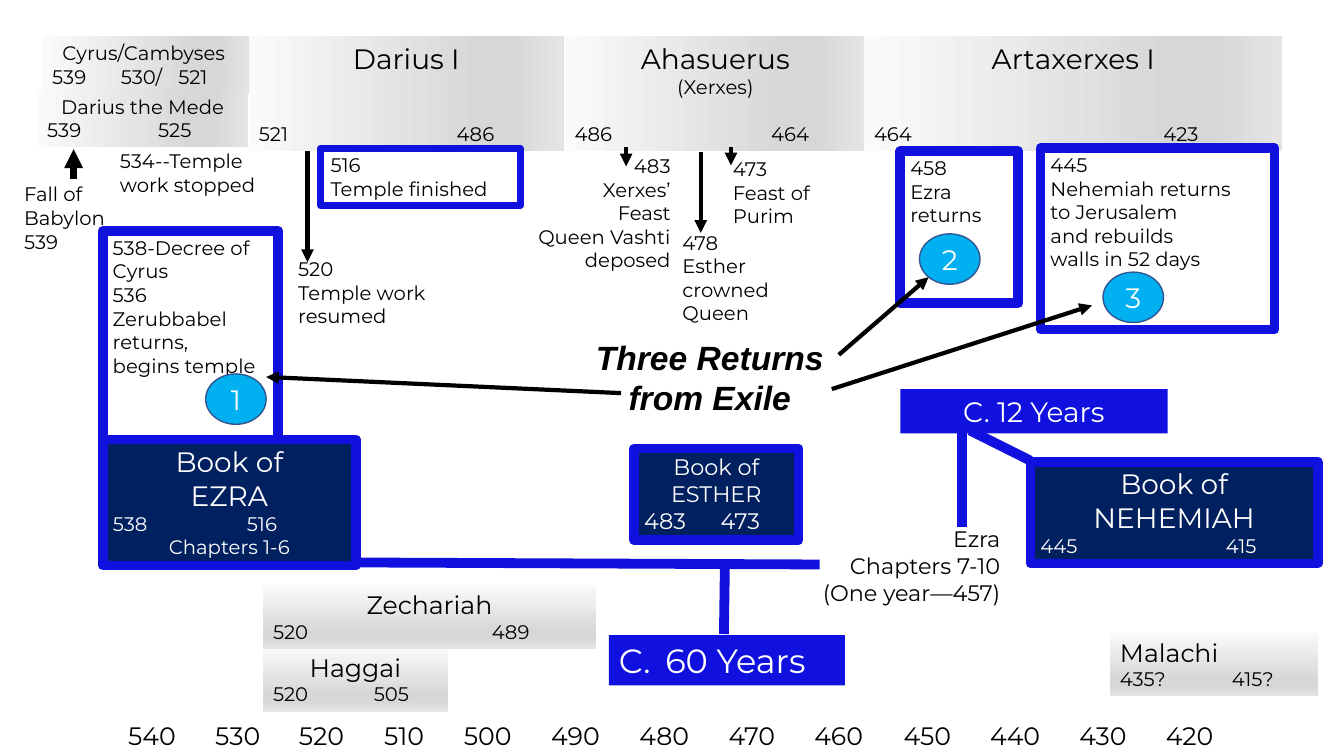
from copy import deepcopy
from dataclasses import dataclass

from lxml import etree
from pptx import Presentation
from pptx import util as u
from pptx.dml.color import RGBColor
from pptx.enum import shapes, text
from pptx.oxml import ns

CELL = u.Inches(0.1)
FONT = "Montserrat"
BLACK = RGBColor(0x00, 0x00, 0x00)
WHITE = RGBColor(0xFF, 0xFF, 0xFF)
BLUE = RGBColor(0x11, 0x11, 0xDF)
NAVY = RGBColor(0x00, 0x20, 0x60)
SKY = RGBColor(0x00, 0xB0, 0xF0)
SKY_EDGE = RGBColor(0x32, 0x54, 0x91)
SILVER = [(0, RGBColor(0xFA, 0xFA, 0xFA)), (0.74, RGBColor(0xD7, 0xD7, 0xD7)),
          (0.83, RGBColor(0xD7, 0xD7, 0xD7)), (1, RGBColor(0xE4, 0xE4, 0xE4))]
LEFT, CENTER, RIGHT = (text.PP_ALIGN.LEFT, text.PP_ALIGN.CENTER,
                       text.PP_ALIGN.RIGHT)
ACROSS, DOWN = 0, 270
YEAR_STOPS = [14.1, 22.6, 30.9, 39.1, 47.4, 56.1, 64.9,
              73.6, 82.2, 91, 99.7, 108.4, 117]


@dataclass
class Line:
    """One paragraph; tabs and indent are in grid cells, gap in points."""
    words: str
    size: int = 14
    align: int = LEFT
    tabs: tuple = ()
    gap: float = 0
    indent: float = 0
    tab_kind: str = "l"


def cells(*values):
    """Turn grid cells into lengths."""
    return [round(v * CELL) for v in values]


def lines(words, size=14, align=LEFT):
    """Make a like-styled Line from each row of words."""
    return [Line(row, size, align) for row in words.split("\n")]


def write(s, content, color=BLACK, font=FONT, strong=False):
    """Fill a shape with paragraphs from the top down."""
    tf = s.text_frame
    tf.word_wrap = True
    tf.vertical_anchor = text.MSO_ANCHOR.TOP
    for i, line in enumerate(content):
        p = tf.paragraphs[0] if i == 0 else tf.add_paragraph()
        p.text = line.words
        p.alignment = line.align
        pr = p._p.get_or_add_pPr()
        if line.indent:
            pr.set("marL", str(round(line.indent * CELL)))
        if line.tabs:
            stops = etree.SubElement(pr, ns.qn("a:tabLst"))
            for stop in line.tabs:
                etree.SubElement(stops, ns.qn("a:tab"), algn=line.tab_kind,
                                 pos=str(round(stop * CELL)))
        if line.gap:
            p.space_before = u.Pt(line.gap)
        for r in p.runs:
            r.font.name, r.font.size = font, u.Pt(line.size)
            r.font.color.rgb = color
            r.font.bold = r.font.italic = strong


def label(slide, area, content, **style):
    """Add plain text."""
    write(slide.shapes.add_textbox(*cells(*area)), content, **style)


def box(slide, area, content, fill=None, edge=None, width=7, color=BLACK,
        kind=shapes.MSO_SHAPE.RECTANGLE):
    """Add a shape with text, optional fill and optional edge."""
    s = slide.shapes.add_shape(kind, *cells(*area))
    s.shadow.inherit = False
    if fill is None:
        s.fill.background()
    else:
        s.fill.solid()
        s.fill.fore_color.rgb = fill
    if edge is None:
        s.line.fill.background()
    else:
        s.line.color.rgb = edge
        s.line.width = u.Pt(width)
    write(s, content, color)
    return s


def silver(slide, area, content, angle=ACROSS):
    """Add a borderless box with a silver gradient."""
    s = box(slide, area, content)
    s.fill.gradient()
    s.fill.gradient_angle = angle
    stops = next(s._element.iter(ns.qn("a:gsLst")))
    for stop in list(stops):
        stops.append(deepcopy(stop))
    for stop, (place, shade) in zip(s.fill.gradient_stops, SILVER):
        stop.position = place
        stop.color.rgb = shade


def badge(slide, col, row, number):
    """Add a numbered disc."""
    s = box(slide, (col, row, 6, 5), [Line(number, 20, CENTER)], SKY, SKY_EDGE,
            1, WHITE, shapes.MSO_SHAPE.OVAL)
    s.text_frame.vertical_anchor = text.MSO_ANCHOR.MIDDLE


def link(slide, ends, color=BLUE, width=7, arrow=False):
    """Add a straight line, with an arrowhead if asked."""
    c = slide.shapes.add_connector(shapes.MSO_CONNECTOR.STRAIGHT, *cells(*ends))
    c.line.color.rgb = color
    c.line.width = u.Pt(width)
    pr = c._element.spPr
    if arrow:
        etree.SubElement(pr.find(ns.qn("a:ln")), ns.qn("a:tailEnd"),
                         type="triangle")
    etree.SubElement(pr, ns.qn("a:effectLst"))


def kings(slide):
    """Add the row of reigns."""
    silver(slide, (4.2, 3.6, 21, 5.7),
           [Line("Cyrus/Cambyses", indent=1),
            Line("539\t530/\t521", tabs=(6.8, 12.5))])
    silver(slide, (3.7, 8.9, 20.9, 5.7),
           [Line("Darius the Mede", align=CENTER),
            Line("539\t525", tabs=(11,))])
    for col, width, name, note, years, stop, gap in [
            (24.7, 31.2, "Darius I", "", "521\t486", 19.6, 34),
            (56, 29.9, "Ahasuerus", "(Xerxes)", "486\t464", 19.5, 17),
            (85.7, 41.5, "Artaxerxes I", "", "464\t423", 28.7, 34)]:
        notes = [Line(note, align=CENTER)] if note else []
        silver(slide, (col, 3.6, width, 11.4),
               [Line(name, 20, CENTER), *notes,
                Line(years, tabs=(stop,), gap=gap)])


def events(slide):
    """Add the dated events under the reigns."""
    for area, words, align in [
            ((1.4, 17.6, 11.2, 8.1), "Fall of\nBabylon\n539", LEFT),
            ((10.9, 14.3, 20.8, 5.7), "534--Temple\nwork stopped", LEFT),
            ((28.6, 25, 16, 8.1), "520\nTemple work\nresumed", LEFT),
            ((48.2, 14.8, 19.3, 12.8),
             "483\nXerxes’\nFeast\nQueen Vashti\ndeposed", RIGHT),
            ((66.7, 22.4, 11.7, 10.4), "478\nEsther\ncrowned\nQueen", LEFT),
            ((71.7, 15.1, 10.8, 8.1), "473\nFeast of\nPurim", LEFT)]:
        label(slide, area, lines(words, align=align))
    for area, width, words in [
            ((31.8, 14.7, 19.8, 5.7), 5, "516\nTemple finished"),
            ((89.3, 15, 11.7, 15.1), 7, "458\nEzra\nreturns"),
            ((103.2, 14.7, 23.2, 18), 7, "445\nNehemiah returns\n"
             "to Jerusalem\nand rebuilds\nwalls in 52 days"),
            ((10.2, 22.9, 17.4, 22.2), 7, "538-Decree of Cyrus\n536\n"
             "Zerubbabel\nreturns,\nbegins temple")]:
        box(slide, area, lines(words), edge=BLUE, width=width)
    for col, row, number in [(20.4, 37.1, "1"), (91.2, 23.2, "2"),
                             (109.4, 27, "3")]:
        badge(slide, col, row, number)


def books(slide):
    """Add the books, their spans and the prophets."""
    for area, name, size, dates in [
            ((10.2, 43.6, 25.1, 12.5), "EZRA", 20,
             [Line("538\t516", tabs=(13.3,)),
              Line("Chapters 1-6", align=CENTER)]),
            ((62.9, 44.5, 16.3, 9.1), "ESTHER", 16,
             [Line("483\t473", 16, tabs=(7.6,))]),
            ((102.2, 45.8, 28.5, 10.1), "NEHEMIAH", 20,
             [Line("445\t415", tabs=(18.4,))])]:
        box(slide, area, lines("Book of\n" + name, size, CENTER) + dates,
            NAVY, BLUE, color=WHITE)
    box(slide, (89.3, 38.6, 26.5, 4.4), [Line("C. 12 Years", 20, CENTER)],
        BLUE, color=WHITE)
    box(slide, (60.4, 63, 23.4, 5), [Line("C.\t60 Years", 24, tabs=(4.6,))],
        BLUE, color=WHITE)
    label(slide, (78.8, 51.6, 21.4, 9.1),
          lines("Ezra\nChapters 7-10\n(One year—457)", 16, RIGHT))
    for area, name, align, years, stop in [
            ((110.1, 62.7, 20.6, 6.4), "Malachi", LEFT, "435?\t415?", 11.1),
            ((26.1, 64.2, 18.3, 6.4), "Haggai", CENTER, "520\t505", 10),
            ((26.1, 58, 33, 6.4), "Zechariah", CENTER, "520\t489", 21.7)]:
        silver(slide, area, [Line(name, 18, align), Line(years, tabs=(stop,))],
               DOWN)


def main():
    """Build the timeline slide."""
    prs = Presentation()
    prs.slide_width, prs.slide_height = u.Inches(13.33), u.Inches(7.5)
    slide = prs.slides.add_slide(prs.slide_layouts[6])
    years = "".join(f"\t{year}" for year in range(540, 410, -10))
    label(slide, (0, 71, 133.3, 4),
          [Line(years, 18, tabs=YEAR_STOPS, tab_kind="ctr")])
    kings(slide)
    events(slide)
    books(slide)
    label(slide, (55.9, 32.9, 29, 9.1),
          lines("Three Returns\nfrom Exile", 24, CENTER),
          font="Arial", strong=True)
    for ends in [(83.2, 35.2, 92.1, 27.5), (82.5, 38.6, 108.3, 30.3),
                 (61.6, 39, 26.4, 37.4), (62.1, 14.6, 62.1, 16.5),
                 (69.5, 15.1, 69.5, 23.1), (72.5, 14.6, 72.5, 16.4),
                 (30.5, 15, 30.5, 26)]:
        link(slide, ends, BLACK, 3, True)
    link(slide, (7.3, 17.8, 7.3, 14.8), BLACK, 4.5, True)
    for ends in [(71.9, 55.9, 71.8, 62.9), (35.3, 55.8, 81.3, 56),
                 (95.4, 42.3, 95.4, 52.3), (96.2, 42.7, 102.2, 45.7)]:
        link(slide, ends)
    prs.save("out.pptx")


if __name__ == "__main__":
    main()
